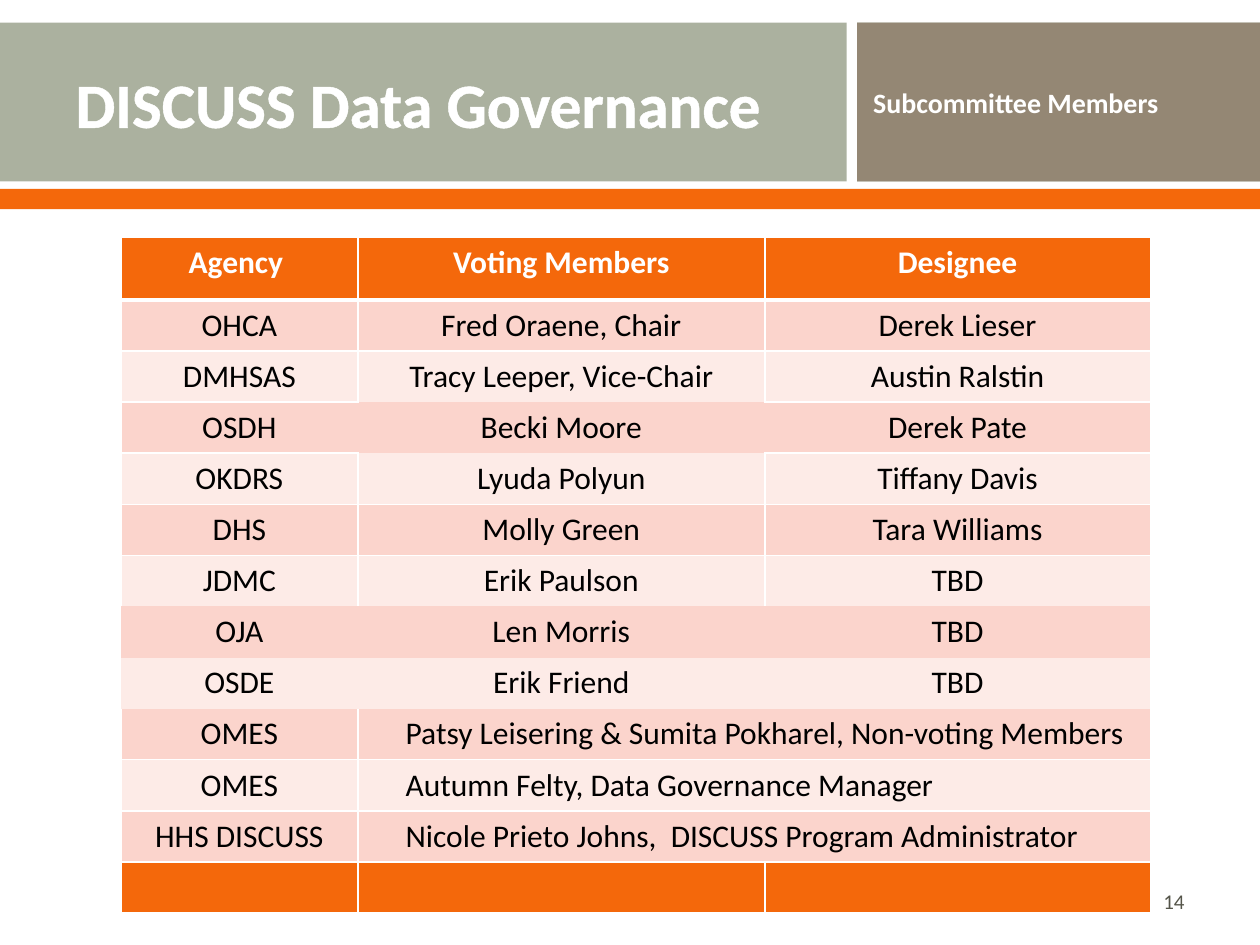
from pptx import Presentation
from pptx.dml.color import RGBColor
from pptx.enum.shapes import MSO_SHAPE
from pptx.enum.text import MSO_ANCHOR, PP_ALIGN
from pptx.util import Inches, Pt
from lxml.etree import SubElement
from pptx.oxml.ns import qn

WHITE, BLACK = "FFFFFF", "000000"
SAGE, ORANGE, TAUPE, GREY = "ABB19F", "F4680B", "948774", "55554A"
ROSE, BLUSH = "FBD4CC", "FDEBE7"
HEAD = ["Agency ", "Voting Members", "Designee"]
ROWS = [
    ["OHCA", "Fred Oraene, Chair", "Derek Lieser"],
    ["DMHSAS", "Tracy Leeper, Vice-Chair", "Austin Ralstin"],
    ["OSDH", "Becki Moore", "Derek Pate"],
    ["OKDRS", "Lyuda Polyun", "Tiffany Davis"],
    ["DHS", "Molly Green", "Tara Williams"],
    ["JDMC", "Erik Paulson", "TBD"],
    ["OJA", "Len Morris", "TBD"],
    ["OSDE", "Erik Friend", "TBD"],
    ["OMES", "Patsy Leisering & Sumita Pokharel, Non-voting Members"],
    ["OMES", "Autumn Felty, Data Governance Manager"],
    ["HHS DISCUSS", "Nicole Prieto Johns,  DISCUSS Program Administrator"],
]
WIDTHS = [1.88, 3.23, 3.06]
HEIGHTS = [0.5] + [4.46 / len(ROWS)] * len(ROWS) + [0.28]
OPEN = {(3, 1)} | {(row, col) for row in (7, 8) for col in range(3)}
SIDES = {"L": (0, -1), "R": (0, 1), "T": (-1, 0), "B": (1, 0)}


def paint(code):
    return RGBColor.from_string(code)


def fill(item, code):
    item.fill.solid()
    item.fill.fore_color.rgb = paint(code)


def line(node, tag, code, width):
    edge = SubElement(node, qn(tag), w=str(Pt(width)))
    if code:
        SubElement(SubElement(edge, qn("a:solidFill")), qn("a:srgbClr"), val=code)
    else:
        SubElement(edge, qn("a:noFill"))


class Deck:
    font = "Calibri"

    def __init__(self):
        self.file = Presentation()
        self.file.slide_width = Inches(10)
        self.file.slide_height = Inches(7.5)
        self.slide = self.file.slides.add_slide(self.file.slide_layouts[1])

    def text(self, frame, words, size, code, bold=False, align=PP_ALIGN.LEFT):
        para = frame.paragraphs[0]
        para.alignment = align
        para.space_before = Pt(0)
        run = para.add_run()
        run.text = words
        run.font.name = self.font
        run.font.size = Pt(size)
        run.font.bold = bold
        run.font.color.rgb = paint(code)
        return run

    def band(self, left, top, width, height, code):
        shape = self.slide.shapes.add_shape(
            MSO_SHAPE.RECTANGLE, Inches(left), Inches(top), Inches(width), Inches(height))
        shape.shadow.inherit = False
        fill(shape, code)
        shape.line.fill.background()

    def place(self, index, left, width, words, size):
        shape = self.slide.placeholders[index]
        shape.left, shape.top = Inches(left), Inches(0.3)
        shape.width, shape.height = Inches(width), Inches(1.03)
        shape.element.getparent().append(shape.element)
        frame = shape.text_frame
        frame.word_wrap = True
        frame.vertical_anchor = MSO_ANCHOR.MIDDLE
        return frame, self.text(frame, words, size, WHITE, True)

    def title(self, words):
        frame, run = self.place(0, 0.5, 6.17, words, 36)
        props = run.font._element
        line(props, "a:ln", WHITE, 1.1)
        props.insert(0, props[-1])

    def body(self, words):
        frame, run = self.place(1, 6.83, 3, words, 16)
        props = frame.paragraphs[0]._p.get_or_add_pPr()
        props.set("marL", "0")
        props.set("indent", "0")
        SubElement(props, qn("a:buNone"))

    def number(self, words):
        box = self.slide.shapes.add_textbox(
            Inches(7.17), Inches(6.95), Inches(2.33), Inches(0.4))
        frame = box.text_frame
        frame.word_wrap = True
        frame.vertical_anchor = MSO_ANCHOR.MIDDLE
        self.text(frame, words, 12, GREY, align=PP_ALIGN.RIGHT)

    def cell(self, cell, row, col, code):
        props = cell._tc.get_or_add_tcPr()
        for side, (down, over) in SIDES.items():
            bare = OPEN & {(row, col), (row + down, col + over)}
            thick = (row, side) in ((0, "B"), (1, "T"))
            line(props, "a:ln" + side, None if bare else WHITE, 3 if thick else 1)
        fill(cell, code)

    def table(self):
        grid = self.slide.shapes.add_table(
            len(HEIGHTS), len(WIDTHS), Inches(0.96), Inches(1.88),
            Inches(sum(WIDTHS)), Inches(sum(HEIGHTS))).table
        for col, width in enumerate(WIDTHS):
            grid.columns[col].width = Inches(width)
        last = len(HEIGHTS) - 1
        for row, texts in enumerate([HEAD, *ROWS, []]):
            grid.rows[row].height = Inches(HEIGHTS[row])
            top = row == 0
            code = ORANGE if row in (0, last) else ROSE if row % 2 else BLUSH
            for col in range(len(WIDTHS)):
                self.cell(grid.cell(row, col), row, col, code)
            wide = len(texts) == 2
            if wide:
                grid.cell(row, 1).merge(grid.cell(row, 2))
            for col, words in enumerate(texts):
                cell = grid.cell(row, col)
                align = PP_ALIGN.CENTER
                if wide and col == 1:
                    align = PP_ALIGN.LEFT
                    cell.margin_left = Inches(0.38)
                self.text(cell.text_frame, words, 18, WHITE if top else BLACK, top, align)


def main():
    deck = Deck()
    deck.band(0, 0.18, 10, 1.26, SAGE)
    deck.band(0, 1.5, 10, 0.16, ORANGE)
    deck.band(6.75, 0.18, 3.25, 1.26, TAUPE)
    deck.band(6.72, 0.15, 0.08, 1.33, WHITE)
    deck.title("DISCUSS Data Governance")
    deck.number("14")
    deck.body("Subcommittee Members")
    deck.table()
    deck.file.save("out.pptx")


if __name__ == "__main__":
    main()
